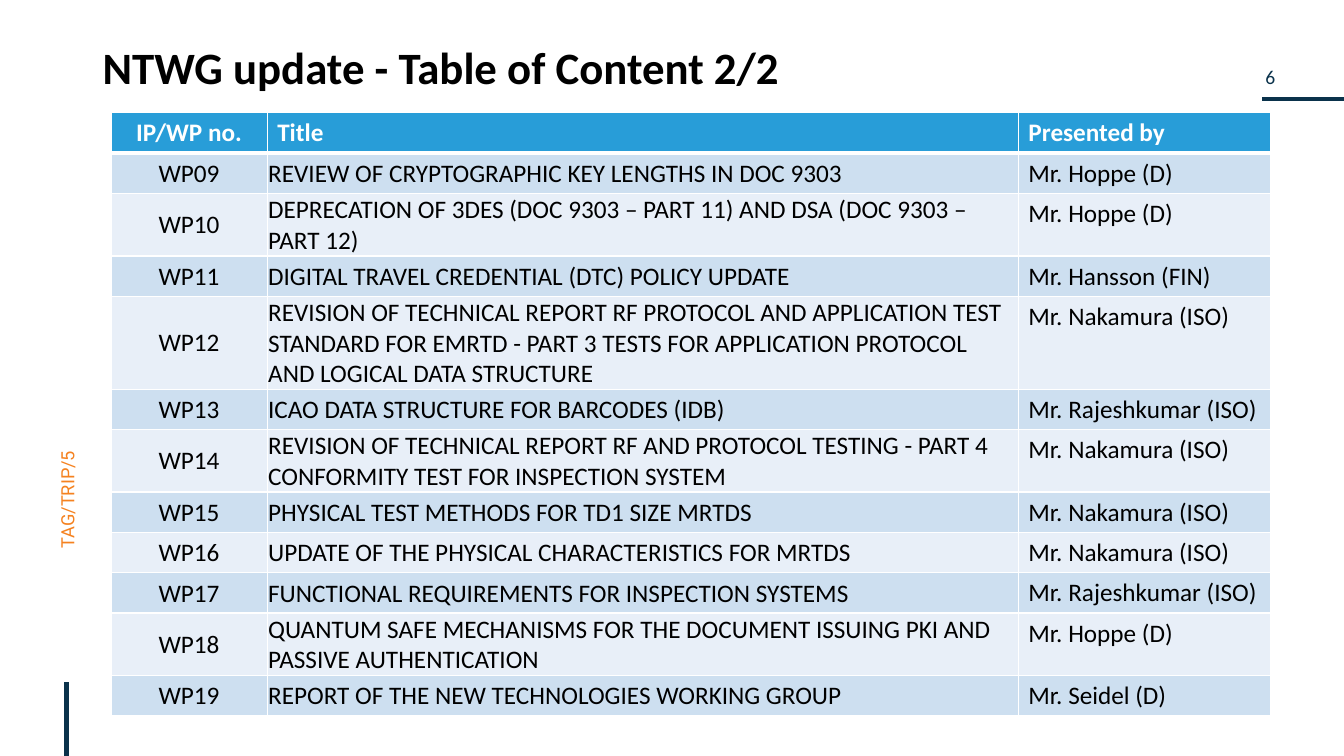
import pptx
import pptx.dml.color
import pptx.enum.shapes
import pptx.enum.text
import pptx.oxml
import pptx.oxml.ns
import pptx.util

Inches = pptx.util.Inches
Pt = pptx.util.Pt
ALIGN = pptx.enum.text.PP_ALIGN
ANCHOR = pptx.enum.text.MSO_ANCHOR

NAVY, ORANGE, BLACK, WHITE = "0A324B", "F58220", "000000", "FFFFFF"
HEADER_BLUE = "289DD8"
BANDS = ("CDDFF0", "E8EFF8")

COLUMN_WIDTHS = (1.55, 7.45, 2.5)
ROW_HEIGHTS = {1: 0.4, 2: 0.62, 3: 0.92}  # inches by lines of title
HEADINGS = ("IP/WP no.", "Title", "Presented by")
FIRST_PAPER = 9
PAPERS = [  # title, lines it takes, presenter
    ("REVIEW OF CRYPTOGRAPHIC KEY LENGTHS IN DOC 9303", 1, "Mr. Hoppe (D)"),
    ("DEPRECATION OF 3DES (DOC 9303 – PART 11) AND DSA (DOC 9303 – PART 12)", 2,
     "Mr. Hoppe (D)"),
    ("DIGITAL TRAVEL CREDENTIAL (DTC) POLICY UPDATE", 1, "Mr. Hansson (FIN)"),
    ("REVISION OF TECHNICAL REPORT RF PROTOCOL AND APPLICATION TEST STANDARD FOR "
     "EMRTD - PART 3 TESTS FOR APPLICATION PROTOCOL AND LOGICAL DATA STRUCTURE", 3,
     "Mr. Nakamura (ISO)"),
    ("ICAO DATA STRUCTURE FOR BARCODES (IDB)", 1, "Mr. Rajeshkumar (ISO)"),
    ("REVISION OF TECHNICAL REPORT RF AND PROTOCOL TESTING - PART 4 CONFORMITY "
     "TEST FOR INSPECTION SYSTEM", 2, "Mr. Nakamura (ISO)"),
    ("PHYSICAL TEST METHODS FOR TD1 SIZE MRTDS", 1, "Mr. Nakamura (ISO)"),
    ("UPDATE OF THE PHYSICAL CHARACTERISTICS FOR MRTDS", 1, "Mr. Nakamura (ISO)"),
    ("FUNCTIONAL REQUIREMENTS FOR INSPECTION SYSTEMS", 1, "Mr. Rajeshkumar (ISO)"),
    ("QUANTUM SAFE MECHANISMS FOR THE DOCUMENT ISSUING PKI AND PASSIVE "
     "AUTHENTICATION", 2, "Mr. Hoppe (D)"),
    ("REPORT OF THE NEW TECHNOLOGIES WORKING GROUP", 1, "Mr. Seidel (D)"),
]


def rgb(color):
    return pptx.dml.color.RGBColor.from_string(color)


def apply(target, values):
    """Set each named attribute of target."""
    for name, value in values.items():
        setattr(target, name, value)


class SlideBuilder:
    font = "Calibri"

    def __init__(self, slide):
        self.slide = slide

    def fill_text(self, frame, text, size, color, bold=False, font=None,
                  **paragraph_format):
        paragraph = frame.paragraphs[0]
        apply(paragraph, paragraph_format)
        run = paragraph.add_run()
        run.text = text
        apply(run.font, {"name": font or self.font, "size": Pt(size), "bold": bold})
        run.font.color.rgb = rgb(color)

    def text(self, box, text, size, color, frame_format, rotation=0, **style):
        label = self.slide.shapes.add_textbox(*map(Inches, box))
        label.rotation = rotation
        apply(label.text_frame, frame_format)
        self.fill_text(label.text_frame, text, size, color, **style)

    def line(self, start, end, color, width):
        rule = self.slide.shapes.add_connector(
            pptx.enum.shapes.MSO_CONNECTOR.STRAIGHT, *map(Inches, start + end))
        rule.line.color.rgb = rgb(color)
        rule.line.width = Pt(width)
        rule._element.spPr.append(pptx.oxml.parse_xml(
            f"<a:effectLst {pptx.oxml.ns.nsdecls('a')}/>"))

    def table(self, left, top, widths, heights):
        frame = self.slide.shapes.add_table(
            len(heights), len(widths), Inches(left), Inches(top),
            Inches(sum(widths)), Inches(sum(heights)))
        table = frame.table
        table.horz_banding = False
        for column, width in zip(table.columns, widths):
            column.width = Inches(width)
        for row, height in zip(table.rows, heights):
            row.height = Inches(height)
        return table

    def cell(self, cell, text, fill, color, cell_format, top=1, bottom=1, **style):
        """Fill one cell; top and bottom are border widths in points."""
        properties = cell._tc.get_or_add_tcPr()
        for side, width in {"L": 1, "R": 1, "T": top, "B": bottom}.items():
            properties.append(pptx.oxml.parse_xml(
                f'<a:ln{side} {pptx.oxml.ns.nsdecls("a")} w="{Pt(width)}">'
                f'<a:solidFill><a:srgbClr val="{WHITE}"/></a:solidFill></a:ln{side}>'))
        cell.fill.solid()
        cell.fill.fore_color.rgb = rgb(fill)
        apply(cell, cell_format)
        self.fill_text(cell.text_frame, text, 18, color, **style)


def main():
    deck = pptx.Presentation()
    apply(deck, {"slide_width": Inches(13.33), "slide_height": Inches(7.5)})
    page = SlideBuilder(deck.slides.add_slide(deck.slide_layouts[6]))

    page.line((12.52, 0.98), (13.33, 0.98), NAVY, 3)
    no_margins = dict.fromkeys(
        ("margin_left", "margin_top", "margin_right", "margin_bottom"), 0)
    page.text((12, 0.64, 1.2, 0.33), "6", 14, NAVY, {**no_margins, "word_wrap": False},
              alignment=ALIGN.CENTER)
    page.line((0.66, 6.77), (0.66, 7.5), NAVY, 3)
    page.text((-0.05, 4.69, 1.46, 0.24), "TAG/TRIP/5", 13, ORANGE,
              {"word_wrap": True, "vertical_anchor": ANCHOR.MIDDLE},
              rotation=270, font="Roboto", line_spacing=0.9)
    page.text((0.92, 0.4, 11.5, 0.72), "NTWG update - Table of Content 2/2", 32, BLACK,
              {"word_wrap": True}, bold=True, line_spacing=0.9)

    heights = [ROW_HEIGHTS[1]] + [ROW_HEIGHTS[lines] for _, lines, _ in PAPERS]
    contents = page.table(1.1, 1.12, COLUMN_WIDTHS, heights)
    alignments = (ALIGN.CENTER, ALIGN.LEFT, ALIGN.LEFT)
    tight = {"vertical_anchor": ANCHOR.MIDDLE, "margin_left": Inches(0.01),
             "margin_top": Inches(0.01), "margin_right": Inches(0.01),
             "margin_bottom": 0}
    cell_formats = (tight, tight, {})

    for column, (heading, alignment) in enumerate(zip(HEADINGS, alignments)):
        page.cell(contents.cell(0, column), heading, HEADER_BLUE, WHITE, {},
                  bottom=3, bold=True, alignment=alignment)
    for row, (title, _, presenter) in enumerate(PAPERS, start=1):
        number = f"WP{FIRST_PAPER + row - 1:02}"
        for column, text in enumerate((number, title, presenter)):
            page.cell(contents.cell(row, column), text, BANDS[(row - 1) % 2], BLACK,
                      cell_formats[column], top=3 if row == 1 else 1,
                      alignment=alignments[column])

    deck.save("out.pptx")


if __name__ == "__main__":
    main()
